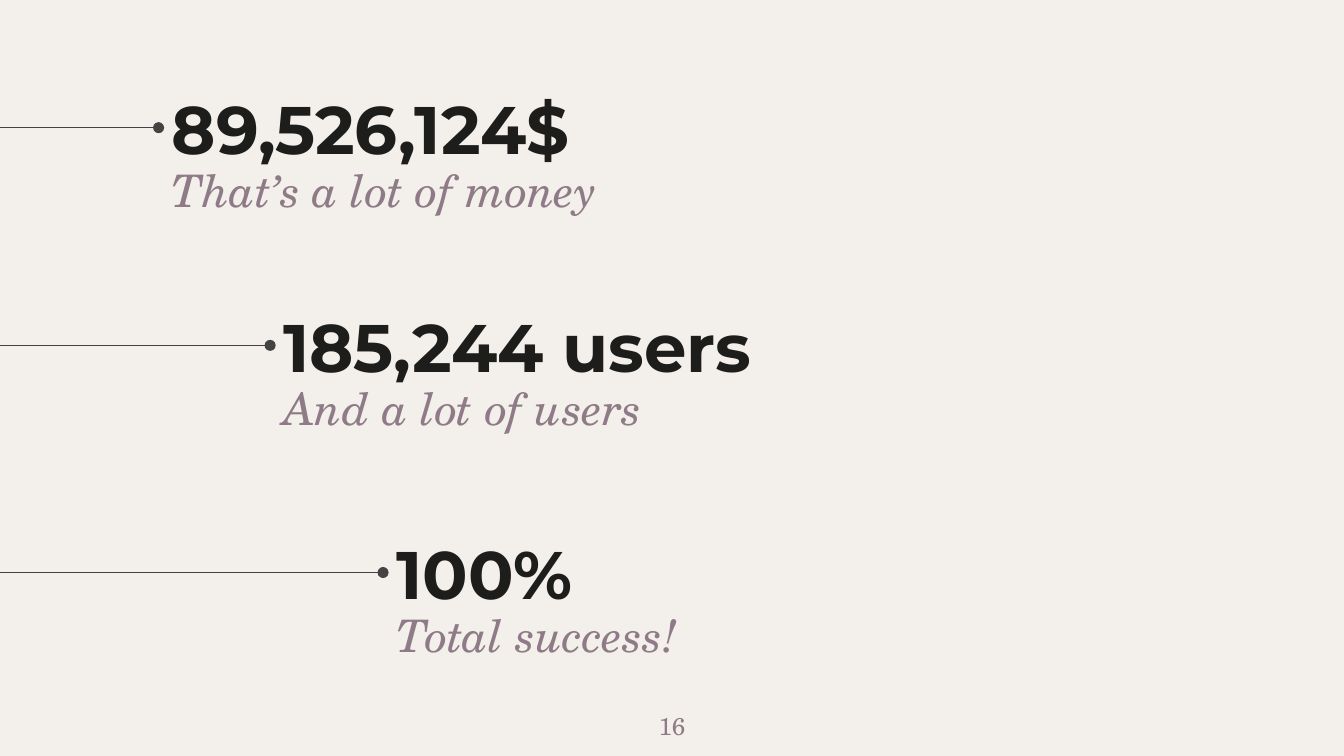
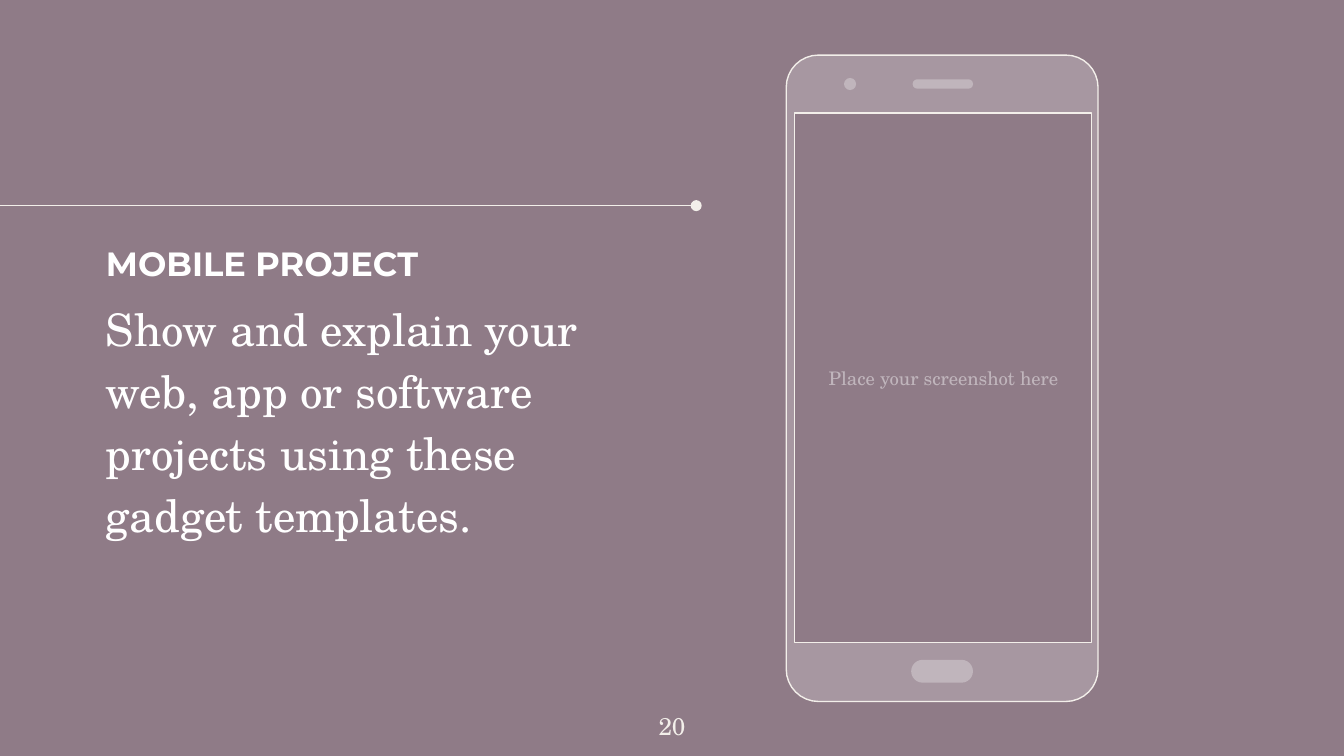
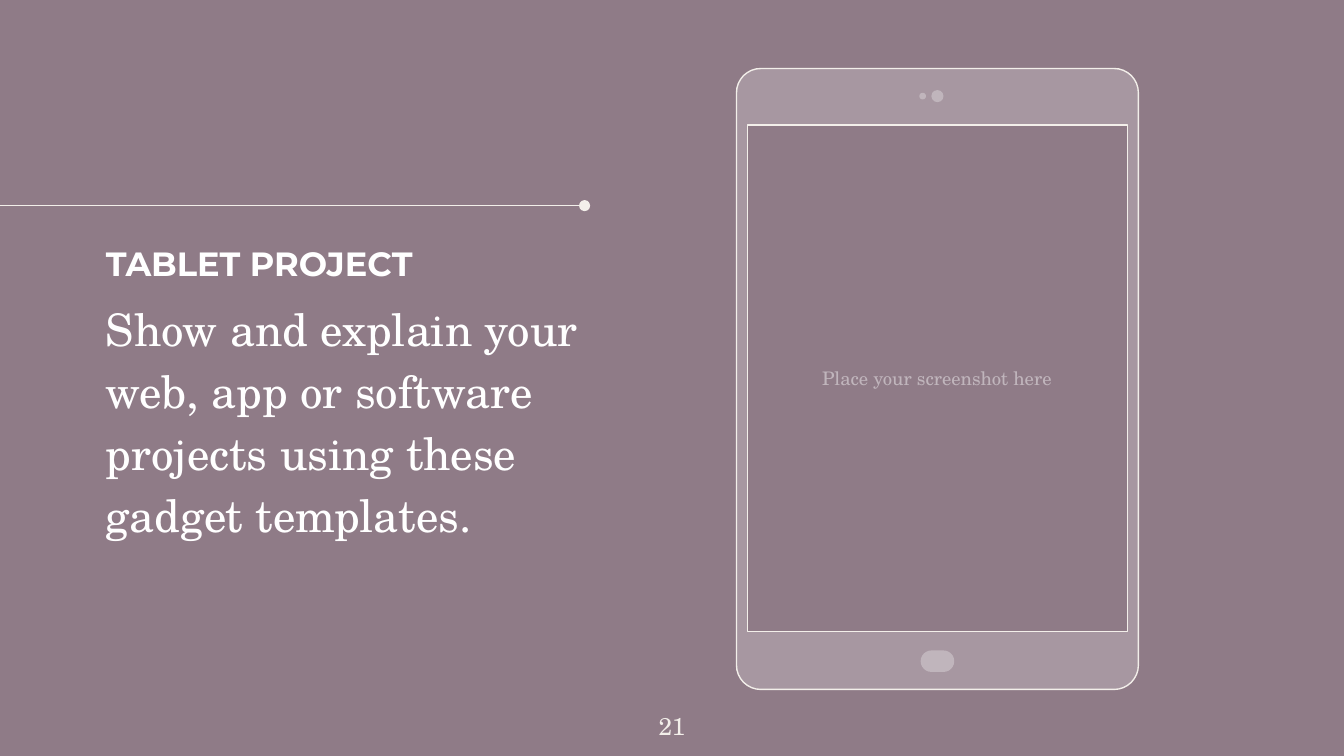
"""Build three slides: big figures, a mobile project and a tablet project."""
import math

import lxml.etree
import pptx
import pptx.dml.color
import pptx.enum.shapes
import pptx.enum.text
import pptx.oxml.ns
import pptx.util

Inches = pptx.util.Inches
Pt = pptx.util.Pt
RGBColor = pptx.dml.color.RGBColor
qn = pptx.oxml.ns.qn
ANCHOR = pptx.enum.text.MSO_ANCHOR
ALIGN = pptx.enum.text.PP_ALIGN
PRESET = pptx.enum.shapes.MSO_SHAPE

SANS = "Montserrat"
SERIF = "TeX Gyre Schola"
THEME = {
    "colors": {
        "paper": RGBColor.from_string("F3EFEA"),
        "mauve": RGBColor.from_string("8F7B87"),
        "ink": RGBColor.from_string("1D1D1B"),
        "rule": RGBColor.from_string("434343"),
        "white": RGBColor.from_string("FFFFFF"),
        "casing": RGBColor.from_string("A797A1"),
        "detail": RGBColor.from_string("C0B5BC"),
    },
    "fonts": {
        "figure": {"name": SANS, "size": Pt(36), "bold": True},
        "caption": {"name": SERIF, "size": Pt(24), "italic": True},
        "heading": {"name": SANS, "size": Pt(18), "bold": True},
        "body": {"name": SERIF, "size": Pt(24), "bold": False},
        "number": {"name": SERIF, "size": Pt(13)},
        "hint": {"name": SERIF, "size": Pt(10)},
    },
    "line": Pt(0.75),
}
COLORS = THEME["colors"]


def add_text(slide, box, paragraphs, color, anchor=ANCHOR.TOP, **layout):
    """Add a text box from (text, font style) pairs."""
    frame = slide.shapes.add_textbox(*map(Inches, box)).text_frame
    settings = {"word_wrap": True, "vertical_anchor": anchor}
    for side in ("left", "top", "right", "bottom"):
        settings[f"margin_{side}"] = Inches(0.1)
    for name, value in settings.items():
        setattr(frame, name, value)
    for index, (text, style) in enumerate(paragraphs):
        paragraph = frame.add_paragraph() if index else frame.paragraphs[0]
        if index:
            paragraph.space_before = Pt(6)
        for name, value in layout.items():
            setattr(paragraph, name, value)
        run = paragraph.add_run()
        run.text = text
        for name, value in THEME["fonts"][style].items():
            setattr(run.font, name, value)
        run.font.color.rgb = COLORS[color]


def add_pin(slide, right, y, color):
    """Add a line from the left edge that ends in a dot."""
    connector = slide.shapes.add_connector(
        pptx.enum.shapes.MSO_CONNECTOR.STRAIGHT, Inches(right), Inches(y), 0, Inches(y))
    connector.line.color.rgb = COLORS[color]
    connector.line.width = THEME["line"]
    properties = connector.element.spPr
    lxml.etree.SubElement(properties.find(qn("a:ln")), qn("a:headEnd"), type="oval")
    lxml.etree.SubElement(properties, qn("a:effectLst"))


presentation = pptx.Presentation()
presentation.slide_width = Inches(10)
presentation.slide_height = Inches(10) * 9 // 16

slides = {}
for number, background, number_color in (
    ("16", "paper", "mauve"),
    ("20", "mauve", "paper"),
    ("21", "mauve", "paper"),
):
    slide = presentation.slides.add_slide(presentation.slide_layouts[6])
    slide.background.fill.solid()
    slide.background.fill.fore_color.rgb = COLORS[background]
    add_text(slide, (4.7, 5.19, 0.6, 0.43), [(number, "number")], number_color,
             alignment=ALIGN.CENTER)
    slides[number] = slide

for left, top, figure, caption in (
    (1.18, 0.46, "89,526,124$", "That’s a lot of money"),
    (2.01, 2.08, "185,244 users", "And a lot of users"),
    (2.85, 3.77, "100%", "Total success!"),
):
    slide = slides["16"]
    add_text(slide, (left, top, 6.57, 0.98), [(figure, "figure")], "ink", ANCHOR.MIDDLE)
    add_text(slide, (left, top + 0.59, 6.57, 0.51), [(caption, "caption")], "mauve",
             line_spacing=1.15)
    add_pin(slide, left, top + 0.49, "rule")

devices = (
    {
        "number": "20", "heading": "MOBILE PROJECT", "text_width": 4.29, "pin": 5.18,
        "hint": (5.92, 0.86, 2.2, 3.91),
        "casing": (5.85, 0.41, 8.17, 5.22), "radius": 0.24,
        "screen": (5.91, 0.84, 8.12, 4.78),
        "details": ((6.78, 4.91, 0.46, 0.17), (6.28, 0.58, 0.09, 0.09),
                    (6.79, 0.59, 0.45, 0.07)),
    },
    {
        "number": "21", "heading": "TABLET PROJECT", "text_width": 3.8, "pin": 4.35,
        "hint": (5.55, 0.93, 2.84, 3.76),
        "casing": (5.48, 0.51, 8.47, 5.13), "radius": 0.18,
        "screen": (5.56, 0.93, 8.39, 4.7),
        "details": ((6.85, 4.84, 0.25, 0.16), (6.84, 0.69, 0.05, 0.05),
                    (6.93, 0.67, 0.09, 0.09)),
    },
)
for device in devices:
    slide = slides[device["number"]]
    add_text(
        slide, (0.69, 1.66, device["text_width"], 2.33),
        [(device["heading"], "heading"),
         ("Show and explain your web, app or software projects using these "
          "gadget templates.", "body")],
        "white", line_spacing=1.15)
    add_pin(slide, device["pin"], 1.53, "paper")
    add_text(slide, device["hint"], [("Place your screenshot here", "hint")], "detail",
             ANCHOR.MIDDLE, alignment=ALIGN.CENTER)

    left, top, right, bottom = device["casing"]
    radius = device["radius"]
    corners = ((right - radius, bottom - radius), (left + radius, bottom - radius),
               (left + radius, top + radius), (right - radius, top + radius))
    outline = []
    for quarter, (center_x, center_y) in enumerate(corners):
        for step in range(9):
            angle = math.pi / 2 * (quarter + step / 8)
            outline.append((Inches(center_x + radius * math.cos(angle)),
                            Inches(center_y + radius * math.sin(angle))))
    left, top, right, bottom = map(Inches, device["screen"])

    group = slide.shapes.add_group_shape()
    builder = group.shapes.build_freeform(*outline[0])
    builder.add_line_segments(outline[1:], close=True)
    builder.move_to(right, top)
    builder.add_line_segments([(left, top), (left, bottom), (right, bottom)], close=True)
    casing = builder.convert_to_shape()
    casing.shadow.inherit = False
    casing.fill.solid()
    casing.fill.fore_color.rgb = COLORS["casing"]
    casing.line.color.rgb = COLORS["paper"]
    casing.line.width = THEME["line"]

    for box in device["details"]:
        detail = group.shapes.add_shape(PRESET.ROUNDED_RECTANGLE, *map(Inches, box))
        detail.adjustments[0] = 0.5
        detail.shadow.inherit = False
        detail.fill.solid()
        detail.fill.fore_color.rgb = COLORS["detail"]
        detail.line.fill.background()

presentation.save("out.pptx")
